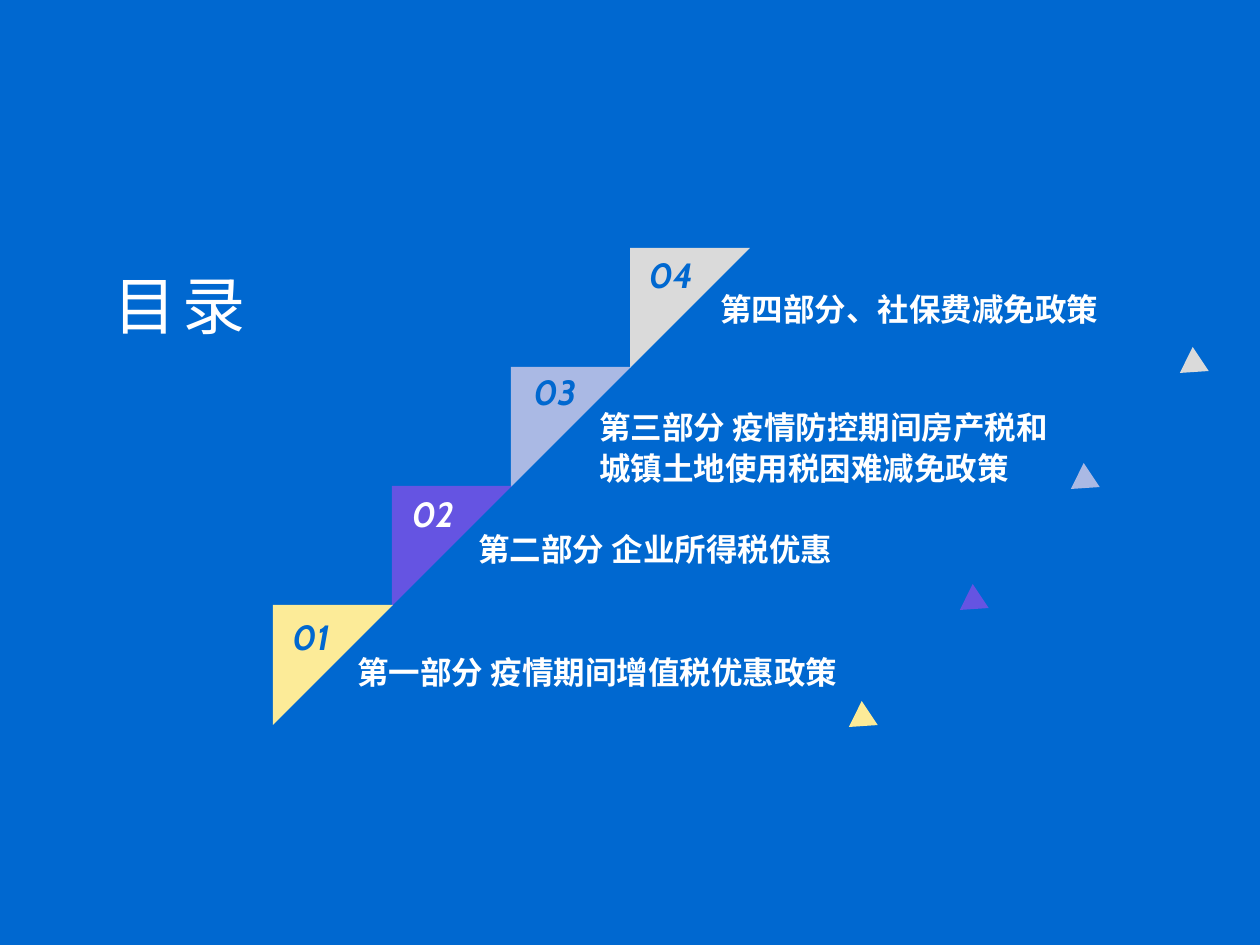
from lxml.etree import SubElement
from pptx import Presentation
from pptx.dml.color import RGBColor
from pptx.enum.shapes import MSO_SHAPE as Shape
from pptx.enum.text import PP_ALIGN as Align
from pptx.oxml.ns import qn
from pptx.util import Pt

PX = 914400 // 126
BLUE, WHITE = "0068D0", "FFFFFF"
CJK_FONT = "Noto Sans CJK SC"
STEP = 119


def paint(target, color):
    """Give a fill or a font a solid colour."""
    if hasattr(target, "solid"):
        target.solid()
        target.fore_color.rgb = RGBColor.from_string(color)
    else:
        target.color.rgb = RGBColor.from_string(color)


def add_text(shapes, place, text, size, color, font="Cabin", bold=True):
    """Add a one-paragraph text box; return its frame and paragraph."""
    frame = shapes.add_textbox(*(n * PX for n in place)).text_frame
    frame.word_wrap = True
    para = frame.paragraphs[0]
    span = para.add_run()
    span.text = text
    east_asian = SubElement(span._r.get_or_add_rPr(), qn("a:ea"))
    east_asian.set("typeface", CJK_FONT)
    para.font.name = font
    para.font.size = Pt(size)
    para.font.bold = bold
    paint(para.font, color)
    return frame, para


deck = Presentation()
deck.slide_width, deck.slide_height = 1260 * PX, 945 * PX
page = deck.slides.add_slide(deck.slide_layouts[6])
paint(page.background.fill, BLUE)

frame, para = add_text(page.shapes, (84, 227, 287, 110), "目录", 36, WHITE, CJK_FONT, False)
frame.margin_left, frame.margin_right = 29 * PX, 10 * PX
frame.margin_top, frame.margin_bottom = 17 * PX, 2 * PX
para.line_spacing = 1.3
para.runs[0]._r.get_or_add_rPr().set("spc", "380")

# number, caption, fill, number colour, number place, caption place, marker place
stairs = [
    ("04", "第四部分、社保费减免政策", "DADADA", BLUE,
     (630, 247), (708, 280, 508), (1183, 353)),
    ("03", "第三部分 疫情防控期间房产税和城镇土地使用税困难减免政策", "AAB9E4", BLUE,
     (514, 364), (587, 398, 498), (1074, 469)),
    ("02", "第二部分 企业所得税优惠", "6554E2", WHITE,
     (392, 486), (466, 520, 504), (963, 590)),
    ("01", "第一部分 疫情期间增值税优惠政策", "FCEB98", BLUE,
     (270, 609), (345, 643, 509), (852, 707)),
]

for row, (number, caption, fill, ink, number_at, caption_at, marker_at) in enumerate(stairs):
    shapes = page.shapes.add_group_shape().shapes
    stair_place = (630 - row * STEP, 248 + row * STEP, STEP + 1, STEP + 1)
    stair = shapes.add_shape(Shape.RIGHT_TRIANGLE, *(n * PX for n in stair_place))
    stair.element.spPr.get_or_add_xfrm().set("flipV", "1")

    _, para = add_text(shapes, (*number_at, 82, 55), number, 20, ink)
    para.font.italic = True
    para.alignment = Align.CENTER

    _, para = add_text(shapes, (*caption_at, 103), caption, 18, WHITE)
    para.line_spacing = 1.1

    marker = shapes.add_shape(Shape.ISOSCELES_TRIANGLE, *(n * PX for n in (*marker_at, 29, 25)))
    marker.rotation = 116.3
    for triangle in (stair, marker):
        triangle.shadow.inherit = False
        paint(triangle.fill, fill)
        triangle.line.fill.background()

deck.save("out.pptx")
